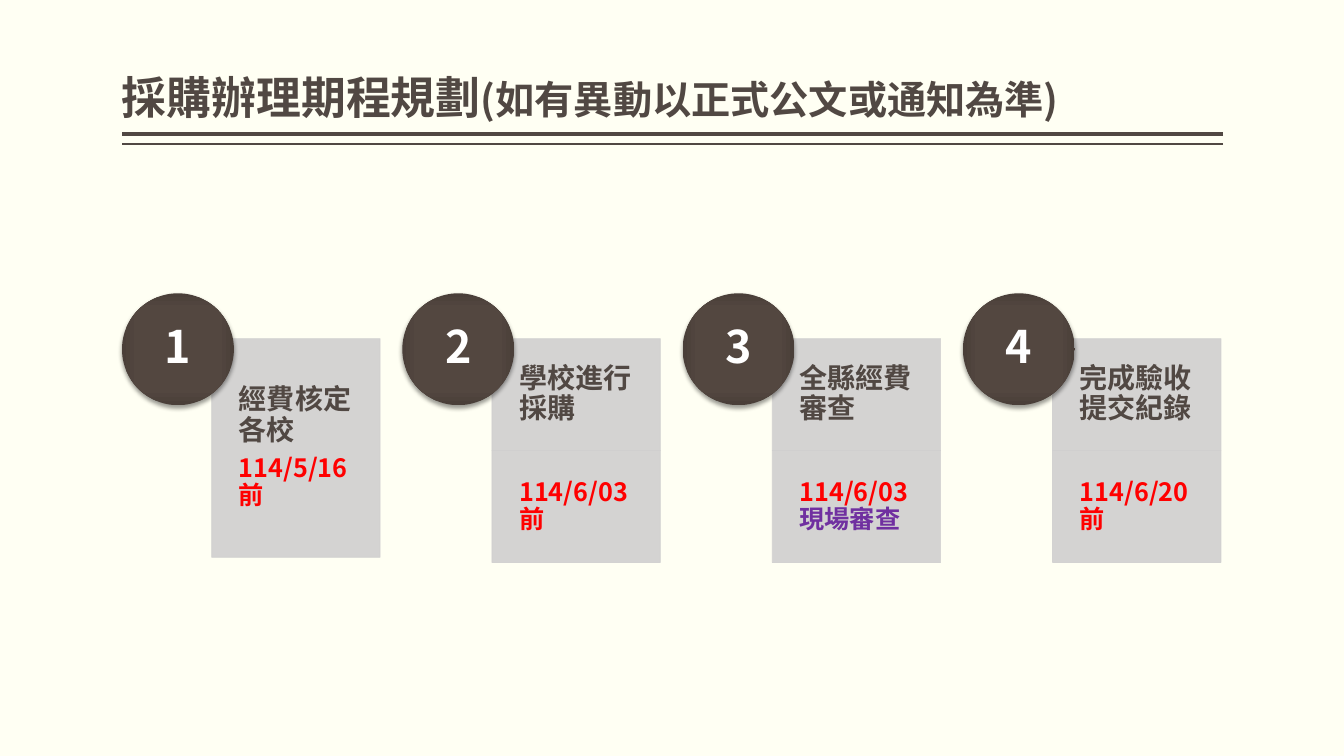
"""Build the procurement schedule slide with four numbered steps."""
from lxml.etree import SubElement
from pptx import Presentation
from pptx.dml.color import RGBColor
from pptx.enum.shapes import MSO_CONNECTOR, MSO_SHAPE
from pptx.enum.text import MSO_ANCHOR, PP_ALIGN
from pptx.oxml import parse_xml
from pptx.oxml.ns import nsdecls, qn
from pptx.util import Inches, Pt

FONT = "Noto Sans CJK SC"
CREAM = RGBColor(0xFF, 0xFF, 0xF3)
BROWN = RGBColor(0x51, 0x48, 0x43)
GRAY = RGBColor(0xD0, 0xCF, 0xCF)
RED = RGBColor(0xFF, 0x00, 0x00)
PURPLE = RGBColor(0x70, 0x30, 0xA0)
WHITE = RGBColor(0xFF, 0xFF, 0xFF)

BADGE_FILL = f"""<a:gradFill {nsdecls('a')} rotWithShape="1"><a:gsLst>
<a:gs pos="0"><a:srgbClr val="544740"/></a:gs>
<a:gs pos="71000"><a:srgbClr val="534740"/></a:gs>
<a:gs pos="100000"><a:srgbClr val="4A3F39"/></a:gs></a:gsLst>
<a:path path="rect"><a:fillToRect l="50000" t="50000" r="50000" b="50000"/></a:path>
</a:gradFill>"""
BADGE_SHADOW = f"""<a:effectLst {nsdecls('a')}>
<a:outerShdw blurRad="39370" dist="25400" dir="5400000" rotWithShape="0">
<a:srgbClr val="000000"><a:alpha val="38000"/></a:srgbClr></a:outerShdw></a:effectLst>"""

LEFT, RIGHT = 1.21, 12.13
STEP_PITCH = 2.78
CARD_OFFSET, CARD_TOP, CARD_WIDTH, CARD_HEIGHT = 0.89, 3.36, 1.67, 1.11
BADGE_TOP, BADGE_SIZE = 2.91, 1.11


def write(frame, paragraphs, insets, align=PP_ALIGN.LEFT, anchor=MSO_ANCHOR.MIDDLE, after=0.35):
    frame.word_wrap = True
    frame.vertical_anchor = anchor
    frame.margin_left, frame.margin_top, frame.margin_right, frame.margin_bottom = map(Inches, insets)
    for index, runs in enumerate(paragraphs):
        paragraph = frame.add_paragraph() if index else frame.paragraphs[0]
        paragraph.alignment = align
        paragraph.line_spacing = 0.9
        paragraph.space_before = Pt(0)
        paragraph.space_after = Pt(round(runs[0][1] * after))
        for text, size, color in runs:
            run = paragraph.add_run()
            run.text = text
            run.font.name = FONT
            run.font.size = Pt(size)
            run.font.bold = True
            run.font.color.rgb = color
            SubElement(run.font._element, qn("a:ea")).set("typeface", FONT)


def add_card(left, top, height, paragraphs, inset):
    card = slide.shapes.add_shape(
        MSO_SHAPE.RECTANGLE, Inches(left), Inches(top), Inches(CARD_WIDTH), Inches(height))
    card.shadow.inherit = False
    card.fill.solid()
    card.fill.fore_color.rgb = GRAY
    card.line.color.rgb = GRAY
    card.line.width = Pt(0.5)
    for color in card._element.spPr.iter(qn("a:srgbClr")):
        SubElement(color, qn("a:alpha")).set("val", "90000")
    write(card.text_frame, paragraphs, (0.27, inset, inset, inset))


presentation = Presentation()
presentation.slide_width = Inches(13.33)
presentation.slide_height = Inches(7.5)
slide = presentation.slides.add_slide(presentation.slide_layouts[5])
slide.background.fill.solid()
slide.background.fill.fore_color.rgb = CREAM

for rule_y, weight in ((1.33, 3), (1.43, 1)):
    rule = slide.shapes.add_connector(
        MSO_CONNECTOR.STRAIGHT, Inches(RIGHT), Inches(rule_y), Inches(LEFT), Inches(rule_y))
    rule.line.color.rgb = BROWN
    rule.line.width = Pt(weight)
    SubElement(rule._element.spPr, qn("a:effectLst"))

heading = slide.shapes.title
heading.left, heading.top = Inches(LEFT), Inches(0.08)
heading.width, heading.height = Inches(RIGHT - LEFT), Inches(1.2)
write(heading.text_frame,
      [[("採購辦理期程規劃", 32, BROWN), ("(如有異動以正式公文或通知為準)", 28, BROWN)]],
      (0, 0.05, 0, 0.05), anchor=MSO_ANCHOR.BOTTOM, after=0)

steps = [
    ("經費核定各校", [("114/5/16前", 18, RED)]),
    ("學校進行採購", [("114/6/03前", 18, RED)]),
    ("全縣經費審查", [("114/6/03", 18, RED), ("現場審查", 18, PURPLE)]),
    ("完成驗收提交紀錄", [("114/6/20前", 18, RED)]),
]
for number, (task, deadline) in enumerate(steps, start=1):
    step_left = LEFT + (number - 1) * STEP_PITCH
    card_left = step_left + CARD_OFFSET
    task_runs = [(task, 20, BROWN)]
    if number == 1:
        add_card(card_left, CARD_TOP, 2.17, [task_runs, deadline], 0.16)
    else:
        add_card(card_left, CARD_TOP, CARD_HEIGHT, [task_runs], 0.16)
        add_card(card_left, CARD_TOP + CARD_HEIGHT, CARD_HEIGHT, [deadline], 0.14)

    badge = slide.shapes.add_shape(
        MSO_SHAPE.OVAL, Inches(step_left), Inches(BADGE_TOP), Inches(BADGE_SIZE), Inches(BADGE_SIZE))
    badge.line.fill.background()
    badge_outline = badge._element.spPr.find(qn("a:ln"))
    badge_outline.addprevious(parse_xml(BADGE_FILL))
    badge_outline.addnext(parse_xml(BADGE_SHADOW))
    write(badge.text_frame, [[(str(number), 32, WHITE)]], (0, 0, 0, 0), align=PP_ALIGN.CENTER)

presentation.save("out.pptx")
